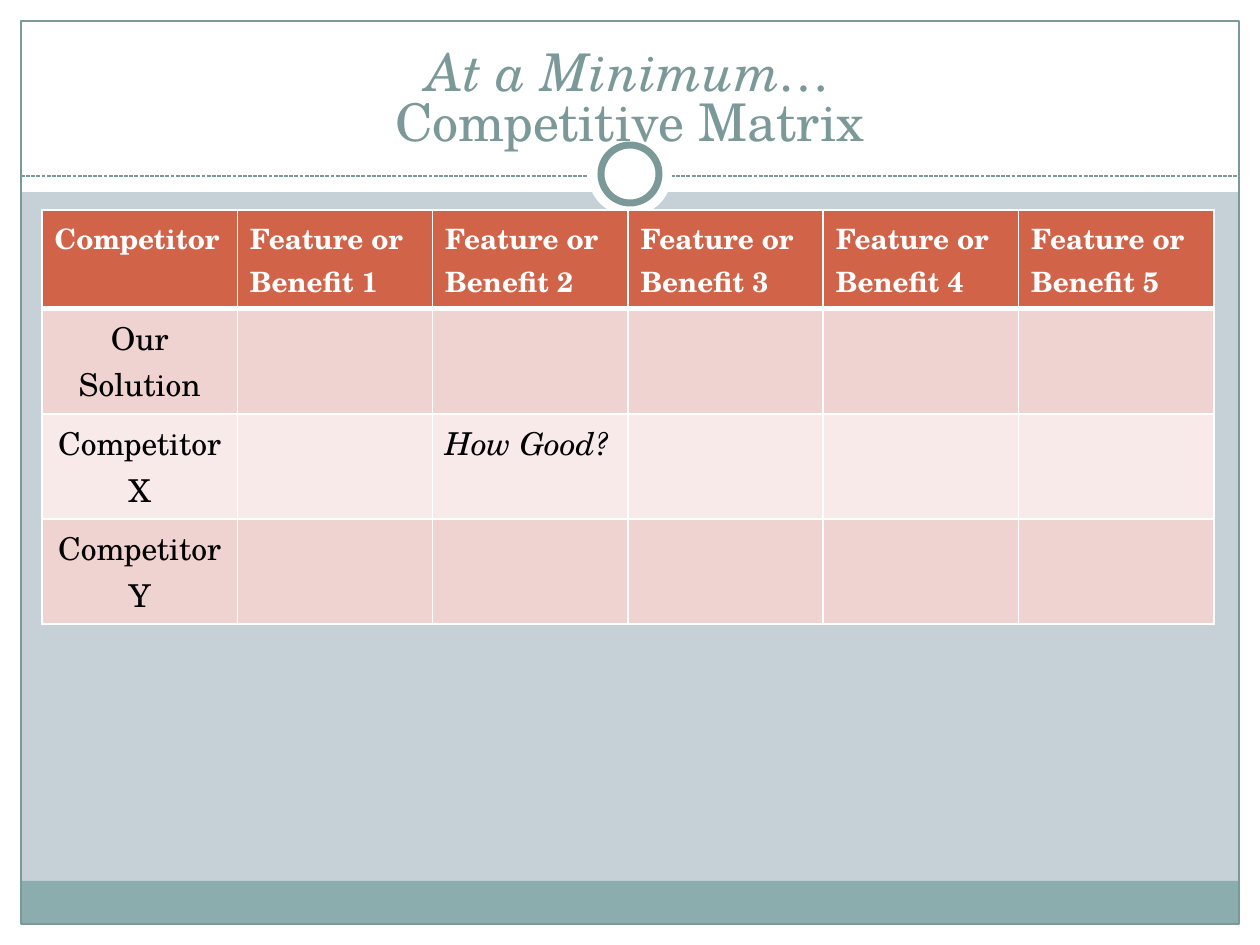
from typing import NamedTuple, Optional

from lxml.etree import SubElement
from pptx import Presentation
from pptx.dml.color import RGBColor
from pptx.enum.dml import MSO_LINE
from pptx.enum.shapes import MSO_CONNECTOR, MSO_SHAPE as Shape
from pptx.enum.text import MSO_ANCHOR as Anchor, PP_ALIGN as Align
from pptx.oxml.ns import qn
from pptx.util import Pt

PX = 914400 // 126  # EMU per px
WIDTH, HEIGHT, EDGE = 1260, 945, 21
FONT = "TeX Gyre Schola"
WHITE, BLACK, TEAL, SAGE = "FFFFFF", "000000", "7C999A", "8CADAE"
BACKDROP, HEADER_FILL = "C5D1D7", "D16349"
BAND_FILLS = ["EED3D0", "F7EAE9"]


class Panel(NamedTuple):
    kind: Shape
    left: int
    top: int
    width: int
    height: int
    fill: Optional[str] = WHITE
    line: Optional[str] = None
    line_pt: float = 0.75


INNER_W, INNER_H = WIDTH - 2 * EDGE, HEIGHT - 2 * EDGE
MARGINS = [
    Panel(Shape.RECTANGLE, 0, HEIGHT - EDGE, WIDTH, EDGE),
    Panel(Shape.RECTANGLE, 0, 0, WIDTH, 192),
    Panel(Shape.RECTANGLE, 0, 0, EDGE, HEIGHT),
    Panel(Shape.RECTANGLE, WIDTH - EDGE, 0, EDGE, HEIGHT),
    Panel(Shape.RECTANGLE, EDGE, 881, INNER_W, 43, SAGE),
    Panel(Shape.RECTANGLE, EDGE, EDGE, INNER_W, INNER_H, None, TEAL),
]
RING = [
    Panel(Shape.OVAL, 588, 132, 84, 84),
    Panel(Shape.OVAL, 601, 145, 58, 58, WHITE, TEAL, 4),
]

FEATURES = [f"Feature or Benefit {number}" for number in range(1, 6)]
MATRIX = [
    ["Competitor", *FEATURES],
    ["Our Solution", "", "", "", "", ""],
    ["Competitor X", "", "How Good?", "", "", ""],
    ["Competitor Y", "", "", "", "", ""],
]


def rgb(value: str) -> RGBColor:
    return RGBColor.from_string(value)


def draw_panel(slide, panel: Panel) -> None:
    box = (panel.left, panel.top, panel.width, panel.height)
    shape = slide.shapes.add_shape(panel.kind, *(n * PX for n in box))
    shape.shadow.inherit = False
    if panel.fill:
        shape.fill.solid()
        shape.fill.fore_color.rgb = rgb(panel.fill)
    else:
        shape.fill.background()
    if panel.line:
        shape.line.color.rgb = rgb(panel.line)
        shape.line.width = Pt(panel.line_pt)
    else:
        shape.line.fill.background()


def draw_divider(slide, y: int) -> None:
    divider = slide.shapes.add_connector(
        MSO_CONNECTOR.STRAIGHT, EDGE * PX, y * PX, (WIDTH - EDGE) * PX, y * PX)
    divider.line.color.rgb = rgb(TEAL)
    divider.line.width = Pt(0.75)
    divider.line.dash_style = MSO_LINE.SQUARE_DOT
    SubElement(divider.element.spPr, qn("a:effectLst"))


def write(paragraph, text: str, *, size: float, color: str, bold: bool = False,
          italic: bool = False, align: Align = Align.LEFT) -> None:
    paragraph.alignment = align
    run = paragraph.add_run()
    run.text = text
    font = run.font
    font.name, font.size, font.bold, font.italic = FONT, Pt(size), bold, italic
    font.color.rgb = rgb(color)


def draw_title(slide) -> None:
    title = slide.shapes.title
    title.left, title.top, title.width, title.height = (
        n * PX for n in (42, 53, 1176, 105))
    slide.shapes.element.append(title.element)  # in front of the frame
    title.text_frame.vertical_anchor = Anchor.BOTTOM
    heading = title.text_frame.paragraphs[0]
    heading.line_spacing = 0.8
    style = dict(size=29.7, color=TEAL, align=Align.CENTER)
    write(heading, "At a Minimum…", italic=True, **style)
    heading.add_line_break()
    write(heading, "Competitive Matrix", **style)


def set_borders(cell, bottom_pt: float) -> None:
    properties = cell._tc.get_or_add_tcPr()
    widths = {"a:lnL": 1, "a:lnR": 1, "a:lnT": 1, "a:lnB": bottom_pt}
    for position, (side, width) in enumerate(widths.items()):
        border = SubElement(properties, qn(side), w=str(Pt(width)))
        fill = SubElement(border, qn("a:solidFill"))
        SubElement(fill, qn("a:srgbClr"), val=WHITE)
        properties.insert(position, border)  # borders come before the fill


def draw_matrix(slide) -> None:
    frame = slide.shapes.add_table(
        len(MATRIX), len(MATRIX[0]), 42 * PX, 210 * PX, 1172 * PX, 344 * PX)
    table = frame.table
    for row_index, labels in enumerate(MATRIX):
        table.rows[row_index].height = 52 * PX
        is_header = row_index == 0
        fill = HEADER_FILL if is_header else BAND_FILLS[(row_index - 1) % 2]
        for column, label in enumerate(labels):
            cell = table.cell(row_index, column)
            cell.fill.solid()
            cell.fill.fore_color.rgb = rgb(fill)
            set_borders(cell, 3 if is_header else 1)
            paragraph = cell.text_frame.paragraphs[0]
            if is_header:
                write(paragraph, label, size=16, color=WHITE, bold=True)
            elif label:
                write(paragraph, label, size=18, color=BLACK, italic=column > 0,
                      align=Align.LEFT if column else Align.CENTER)
            else:
                paragraph.font.size = Pt(18)
    frame.height = 344 * PX


def main() -> None:
    deck = Presentation()
    deck.slide_width, deck.slide_height = WIDTH * PX, HEIGHT * PX
    slide = deck.slides.add_slide(deck.slide_layouts[5])
    slide.background.fill.solid()
    slide.background.fill.fore_color.rgb = rgb(BACKDROP)

    # Frame with its divider and ring
    for panel in MARGINS:
        draw_panel(slide, panel)
    draw_divider(slide, 176)
    for panel in RING:
        draw_panel(slide, panel)

    # Content
    draw_title(slide)
    draw_matrix(slide)
    deck.save("out.pptx")


if __name__ == "__main__":
    main()
